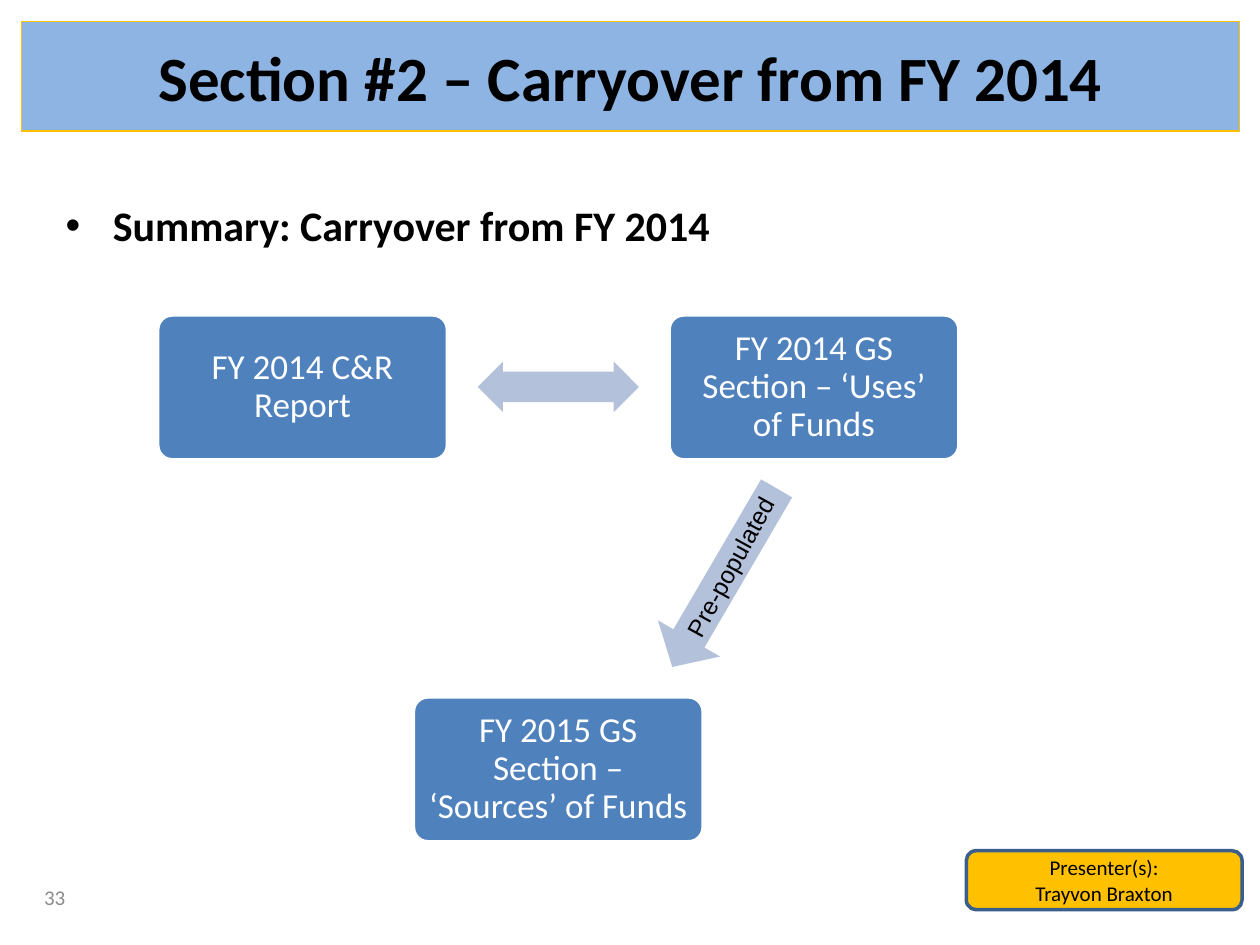
from pptx import Presentation
from pptx.dml.color import RGBColor
from pptx.enum.shapes import MSO_SHAPE as Shape
from pptx.enum.text import MSO_ANCHOR as Anchor, PP_ALIGN as Align
from pptx.util import Cm, Pt

TITLE = "Section #2 – Carryover from FY 2014"
SUMMARY = "Summary: Carryover from FY 2014"
PRESENTER = ["Presenter(s):", "Trayvon Braxton"]
PAGE_NUMBER = "33"
ARROW_LABEL = "Pre-populated"

BOX_WIDTH, BOX_HEIGHT = 5.84, 2.92
LEFT_X, RIGHT_X = 3.18, 13.49
TOP_Y, BOTTOM_Y = 6.35, 14.05
BOXES = [
    ("FY 2014 C&R Report", LEFT_X, TOP_Y),
    ("FY 2015 GS Section – ‘Sources’ of Funds", (LEFT_X + RIGHT_X) / 2, BOTTOM_Y),
    ("FY 2014 GS Section – ‘Uses’ of Funds", RIGHT_X, TOP_Y),
]
ARROWS = [
    (Shape.LEFT_ARROW, (12.52, 10.92, 4.17, 1.45), 300.3, (0.5, 0.46)),
    (Shape.LEFT_RIGHT_ARROW, (9.63, 7.29, 3.25, 1.02), 0, (0.6, 0.5)),
]

BOX_FORMAT = {"size": Pt(20), "name": "Calibri"}
SMALL_FORMAT = {"size": Pt(12), "name": "Calibri"}


def color(hex_value):
    return RGBColor.from_string(hex_value)


def place(shape, area):
    for name, value in zip(("left", "top", "width", "height"), area):
        setattr(shape, name, Cm(value))


def paint(shape, fill, line=None, line_width=0):
    shape.fill.solid()
    shape.fill.fore_color.rgb = color(fill)
    if line:
        shape.line.color.rgb = color(line)
        shape.line.width = Pt(line_width)
    else:
        shape.line.fill.background()


def write(shape, lines, font_format, text_color="000000", align=Align.CENTER,
          anchor=Anchor.MIDDLE, spacing=None):
    frame = shape.text_frame
    frame.word_wrap = True
    frame.vertical_anchor = anchor
    for index, line in enumerate(lines):
        paragraph = frame.add_paragraph() if index else frame.paragraphs[0]
        paragraph.alignment = align
        if spacing:
            paragraph.line_spacing = spacing
        run = paragraph.add_run()
        run.text = line
        run.font.color.rgb = color(text_color)
        for name, value in font_format.items():
            setattr(run.font, name, value)


def add_shape(slide, kind, area, adjustments=()):
    shape = slide.shapes.add_shape(kind, *map(Cm, area))
    shape.shadow.inherit = False
    for index, value in enumerate(adjustments):
        shape.adjustments[index] = value
    return shape


def add_text(slide, area, text, font_format, text_color, anchor):
    box = slide.shapes.add_textbox(*map(Cm, area))
    write(box, [text], font_format, text_color, Align.LEFT, anchor)
    return box


def main():
    presentation = Presentation()
    presentation.slide_width, presentation.slide_height = Cm(25.4), Cm(19.05)
    slide = presentation.slides.add_slide(presentation.slide_layouts[1])

    title, body = slide.placeholders
    place(title, (0.43, 0.43, 24.56, 2.21))
    paint(title, "8EB4E3", "FFC000", 0.75)
    write(title, [TITLE], {"size": Pt(36), "name": "Calibri", "bold": True})

    place(body, (1.07, 4.01, 23.06, 12.55))
    write(body, [SUMMARY], {"size": Pt(24), "name": "Calibri", "bold": True},
          align=Align.LEFT, anchor=Anchor.TOP, spacing=0.9)
    bullet = body.text_frame.paragraphs[0]._p.get_or_add_pPr()
    bullet.set("marL", str(Cm(0.95)))
    bullet.set("indent", str(Cm(-0.95)))

    add_text(slide, (0.64, 17.58, 5.92, 1.02), PAGE_NUMBER, SMALL_FORMAT,
             "8C8C8C", Anchor.MIDDLE)

    presenter = add_shape(slide, Shape.ROUNDED_RECTANGLE, (19.48, 17.15, 5.56, 1.19))
    paint(presenter, "FFC000", "3A5F8C", 2)
    write(presenter, PRESENTER, SMALL_FORMAT)

    for text, left, top in BOXES:
        box = add_shape(slide, Shape.ROUNDED_RECTANGLE,
                        (left, top, BOX_WIDTH, BOX_HEIGHT), [0.1])
        paint(box, "4F81BD", "FFFFFF", 2)
        frame = box.text_frame
        for side in ("left", "top", "right", "bottom"):
            setattr(frame, f"margin_{side}", Cm(0.22))
        write(box, [text], BOX_FORMAT, "FFFFFF", spacing=0.9)

    for kind, area, rotation, adjustments in ARROWS:
        arrow = add_shape(slide, kind, area, adjustments)
        arrow.rotation = rotation
        paint(arrow, "B3C1DB")

    label = add_text(slide, (12.8, 10.8, 4.06, 0.86), ARROW_LABEL,
                     {"size": Pt(14), "name": "Arial"}, "000000", Anchor.TOP)
    label.rotation = 298.7

    presentation.save("out.pptx")


if __name__ == "__main__":
    main()
